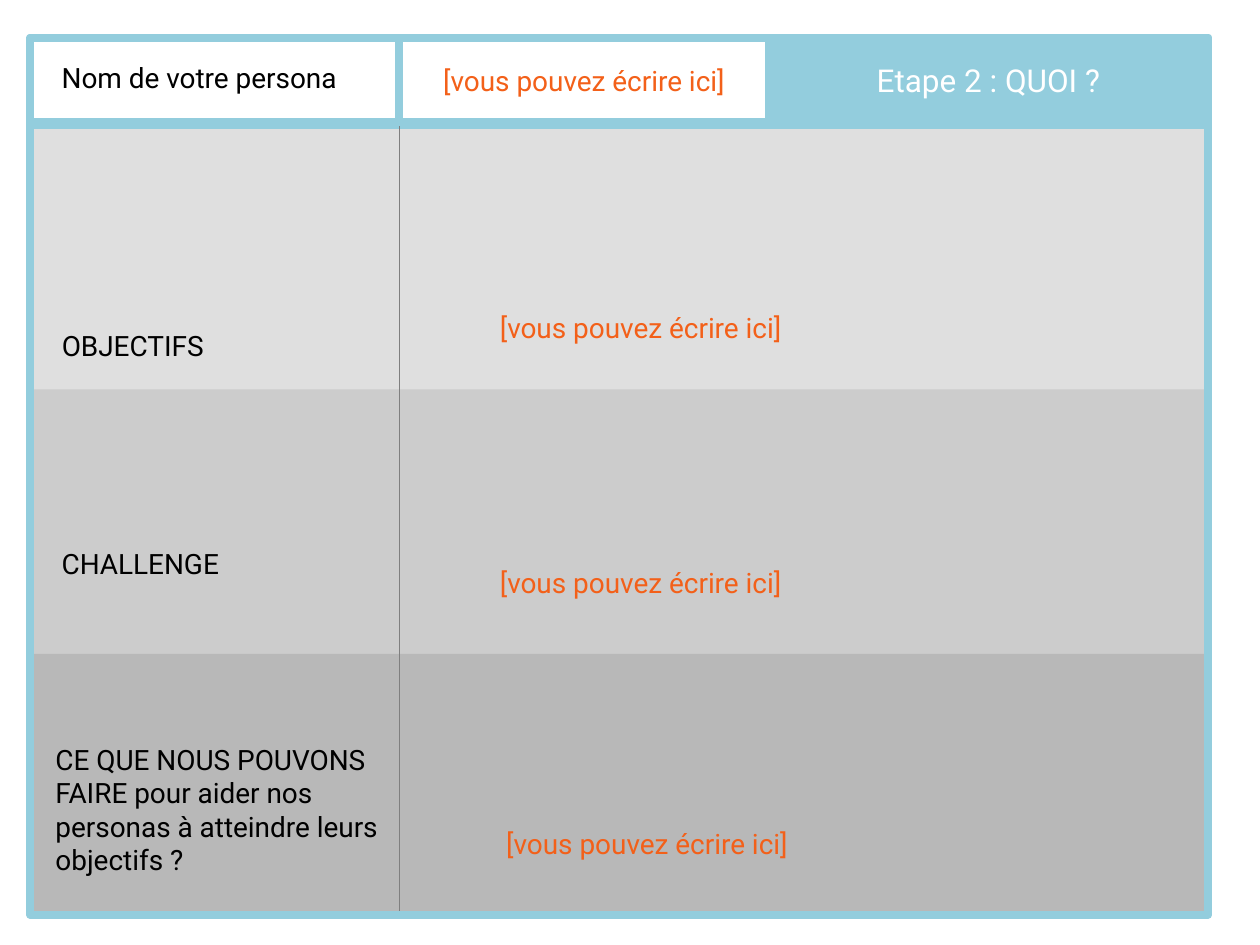
from dataclasses import dataclass

from pptx import Presentation
from pptx.dml.color import RGBColor
from pptx.enum.shapes import MSO_CONNECTOR, MSO_SHAPE
from pptx.enum.text import MSO_ANCHOR, MSO_AUTO_SIZE, PP_ALIGN
from pptx.oxml.ns import qn
from pptx.util import Emu, Pt
from lxml.etree import SubElement

PX = 9144  # 100 px to the inch


@dataclass(frozen=True)
class Theme:
    font: str = "Roboto"
    body: int = 16
    head: int = 18
    inset: int = 5
    edge: float = 4.5
    hair: float = 0.25
    black: str = "000000"
    white: str = "FFFFFF"
    blue: str = "93CDDD"
    orange: str = "F36019"
    rule: str = "7F7F7F"
    bands: tuple = ("DFDFDF", "CCCCCC", "B8B8B8")


def px(*nums):
    return [Emu(n * PX) for n in nums]


def rgb(code):
    return RGBColor.from_string(code)


class Board:
    def __init__(self, deck, theme):
        self.theme = theme
        self.slide = deck.slides.add_slide(deck.slide_layouts[5])
        self.shapes = self.slide.shapes

    def box(self, x, y, w, h, fill=None, line=None):
        box = self.shapes.add_shape(MSO_SHAPE.RECTANGLE, *px(x, y, w, h))
        box.shadow.inherit = False
        if fill:
            box.fill.solid()
            box.fill.fore_color.rgb = rgb(fill)
        else:
            box.fill.background()
        if line:
            box.line.color.rgb = rgb(line)
            box.line.width = Pt(self.theme.edge)
        else:
            box.line.fill.background()

    def rule(self, x, top, end):
        rule = self.shapes.add_connector(
            MSO_CONNECTOR.STRAIGHT, *px(x, top, x, end))
        rule.line.color.rgb = rgb(self.theme.rule)
        rule.line.width = Pt(self.theme.hair)
        SubElement(rule.element.spPr, qn("a:effectLst"))

    def style(self, shape, words, size, color, mid):
        """Fill a text shape; mid centres it both ways."""
        frame = shape.text_frame
        frame.text = words
        frame.word_wrap = True
        frame.auto_size = MSO_AUTO_SIZE.SHAPE_TO_FIT_TEXT
        frame.vertical_anchor = MSO_ANCHOR.MIDDLE if mid else MSO_ANCHOR.TOP
        inset = Emu(self.theme.inset * PX)
        frame.margin_left = frame.margin_right = inset
        frame.margin_top = frame.margin_bottom = inset
        para = frame.paragraphs[0]
        para.alignment = PP_ALIGN.CENTER if mid else PP_ALIGN.LEFT
        para.font.name = self.theme.font
        para.font.size = Pt(size)
        para.font.color.rgb = rgb(color)

    def label(self, x, y, w, h, words, wrap=True):
        text = self.shapes.add_textbox(*px(x, y, w, h))
        self.style(text, words, self.theme.body, self.theme.black, False)
        text.text_frame.word_wrap = wrap

    def prompt(self, x, y):
        text = self.shapes.add_textbox(*px(x, y, 293, 41))
        self.style(text, "[vous pouvez écrire ici]", self.theme.body,
                   self.theme.orange, True)

    def title(self, x, y, w, h, words):
        title = self.shapes.title
        title.left, title.top, title.width, title.height = px(x, y, w, h)
        self.style(title, words, self.theme.head, self.theme.white, True)
        # Bring the title in front of its blue box
        title.element.getparent().append(title.element)


def main():
    deck = Presentation()
    deck.slide_width, deck.slide_height = px(1000, 750)
    theme = Theme()
    board = Board(deck, theme)

    left, top, wide, head = 24, 30, 935, 67
    col = 293
    mid, last = left + col, left + 2 * col

    rows = zip((99, 309, 519), (215, 219, 205), theme.bands,
               (theme.blue, None, None))
    for y, high, fill, line in rows:
        board.box(left, y, wide, high, fill, line)
    board.rule(mid, top + head, 726)

    board.box(left, top, wide, 696, line=theme.blue)
    for x in (left, mid):
        board.box(x, top, col, head, line=theme.blue)
    board.box(last, top, left + wide - last, head, theme.blue, theme.blue)
    board.title(last, 41, left + wide - last, 45, "Etape 2 : QUOI ?")

    board.label(44, 43, 240, 41, "Nom de votre persona", wrap=False)
    board.label(44, 256, 128, 41, "OBJECTIFS", wrap=False)
    board.label(44, 429, 226, 41, "CHALLENGE")
    board.label(39, 584, 278, 132,
                "CE QUE NOUS POUVONS FAIRE pour aider nos personas "
                "à atteindre leurs objectifs ?")
    for x, y in ((mid, 43), (362, 239), (362, 442), (367, 649)):
        board.prompt(x, y)

    deck.save("out.pptx")


if __name__ == "__main__":
    main()
